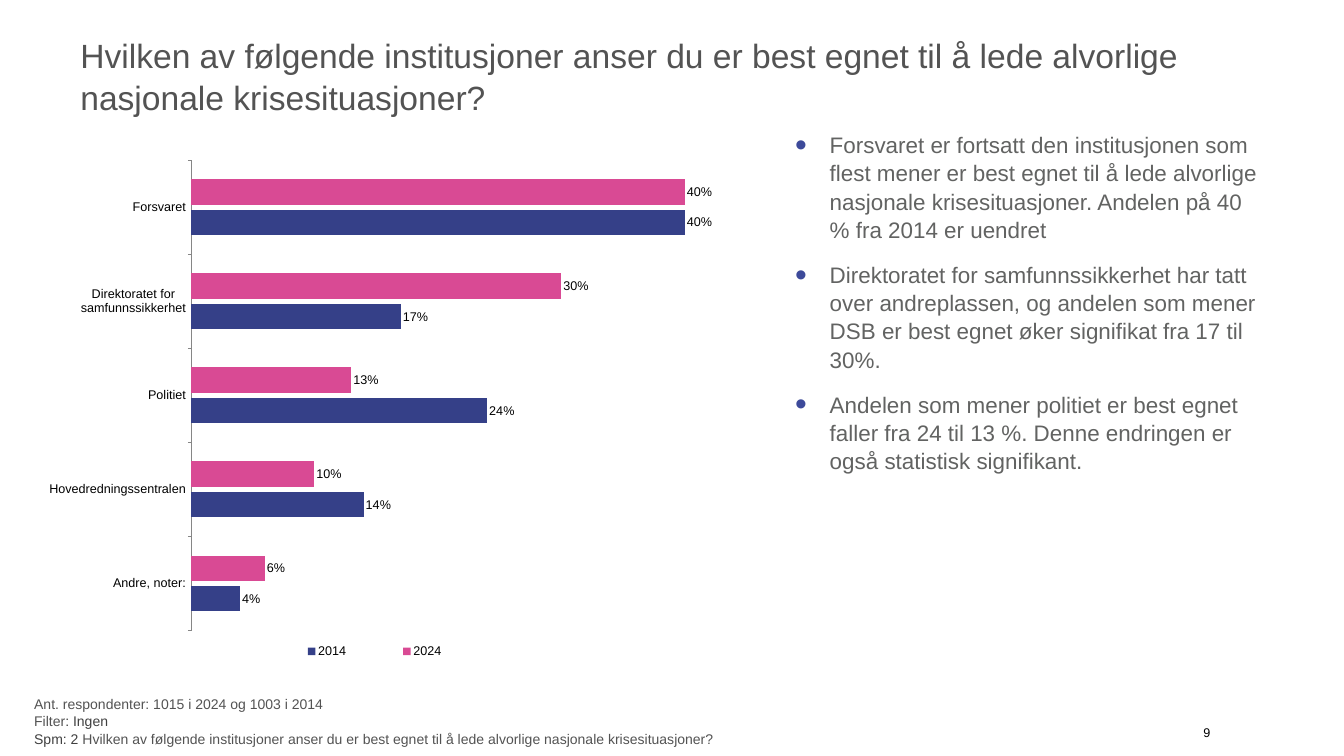
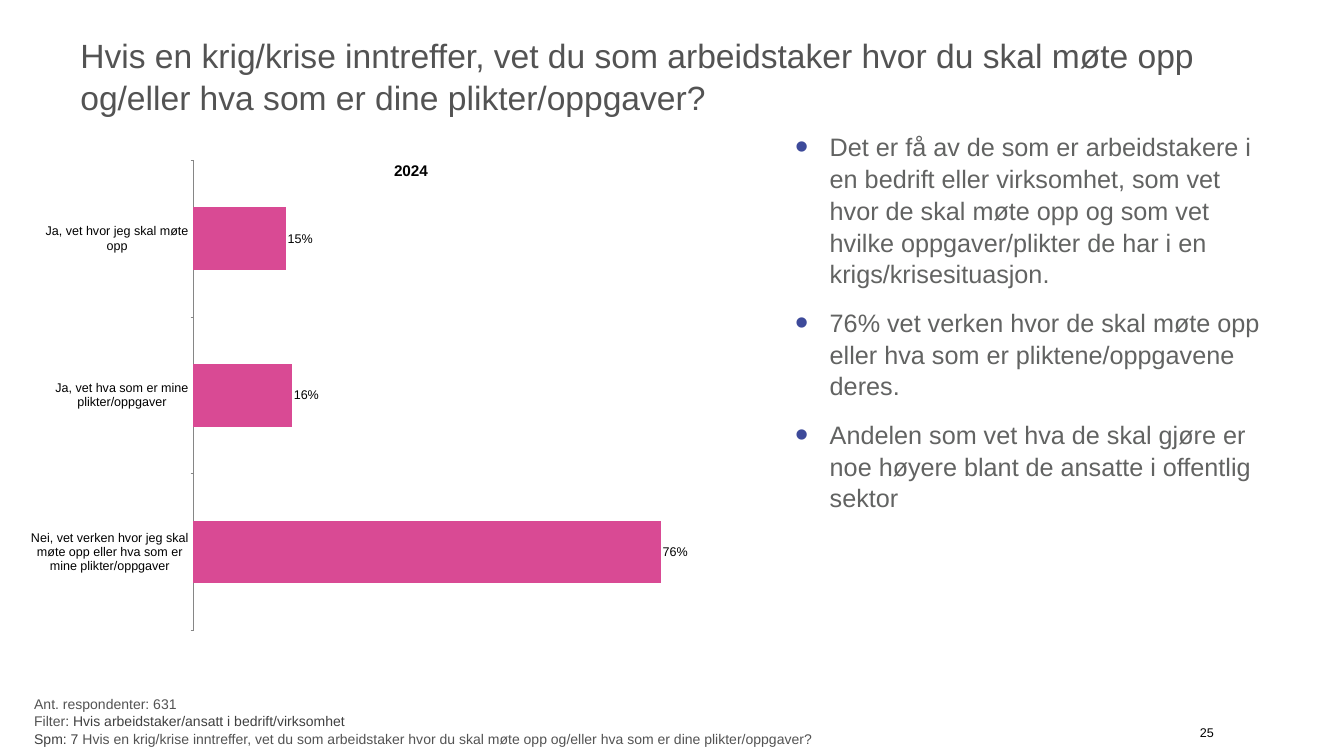
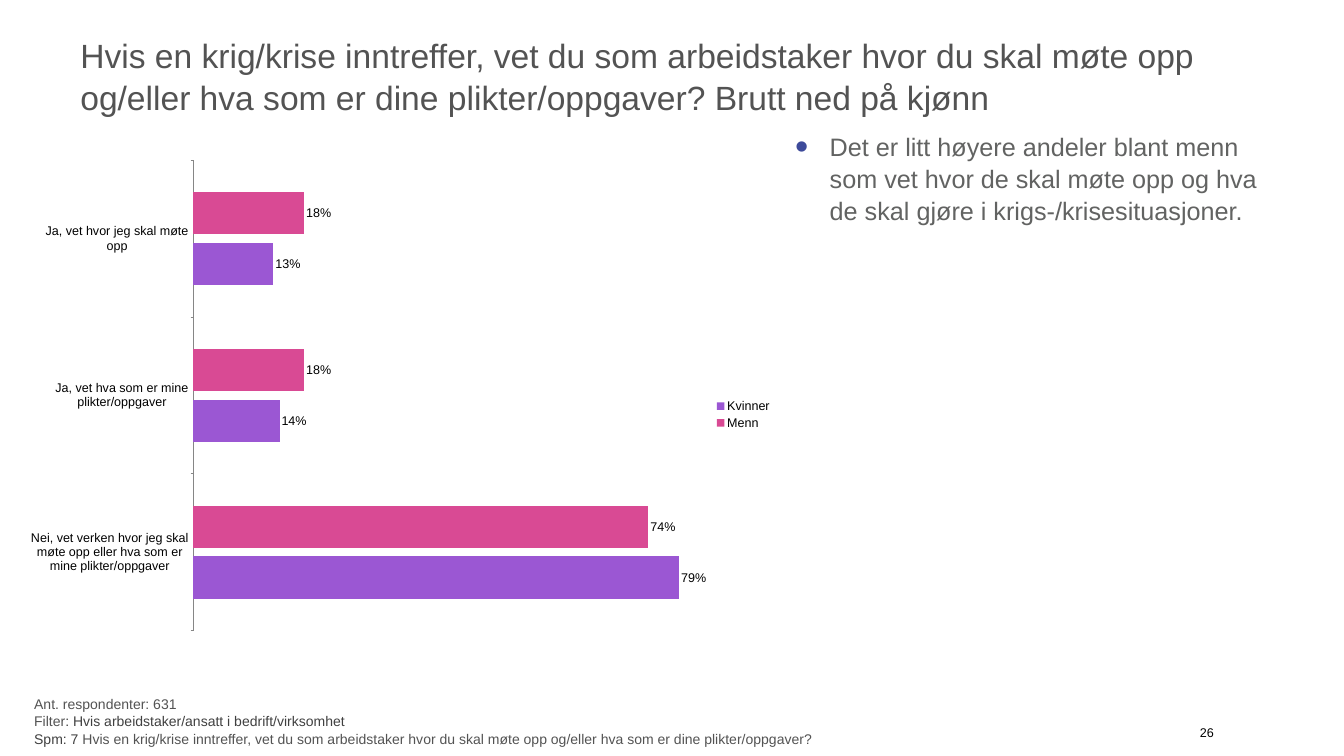
from dataclasses import dataclass

from pptx import Presentation
from pptx.chart.data import CategoryChartData
from pptx.dml.color import RGBColor
from pptx.enum.chart import (XL_CHART_TYPE, XL_LABEL_POSITION, XL_LEGEND_POSITION,
                             XL_TICK_LABEL_POSITION, XL_TICK_MARK)
from pptx.enum.text import MSO_ANCHOR, MSO_AUTO_SIZE, PP_ALIGN
from pptx.oxml import parse_xml
from pptx.oxml.ns import nsdecls, qn
from pptx.util import Pt

PX = 9525


@dataclass(frozen=True)
class Theme:
    font: str = "Arial"
    title: str = "535353"
    body: str = "626362"
    note: str = "404040"
    bullet: str = "3D4A9A"
    black: str = "000000"
    axis: str = "868686"
    pink: str = "D94A94"
    blue: str = "354088"
    purple: str = "9B57D3"
    title_size: int = 48
    note_size: int = 20
    small_size: int = 18
    chart_title_size: int = 22
    line_spacing: float = 1.05


T = Theme()

TITLE_BOX = (147, 45, 2271, 196)
NUMBER_BOX = (2279, 1375, 40, 40)
NOTE_BOX = (59, 1331, 2271, 84)
BODY_BOX = (1505, 243, 918, 1036)
CHART_BOX = (59, 271, 1423, 1037)
PLOT = (305, 34, 1059, 896)
LEGEND_BELOW = (427, 954, 455, 31)
CHART_TITLE_AT = (683, 31)
INDENT = 66

DUTY_QUESTION = ("Hvis en krig/krise inntreffer, vet du som arbeidstaker hvor du skal møte opp "
                 "og/eller hva som er dine plikter/oppgaver?")
LEAD_QUESTION = ("Hvilken av følgende institusjoner anser du er best egnet til å lede alvorlige "
                 "nasjonale krisesituasjoner?")
DUTY_ANSWERS = ["Ja, vet hvor jeg skal møte opp",
                "Ja, vet hva som er mine plikter/oppgaver",
                "Nei, vet verken hvor jeg skal møte opp eller hva som er mine plikter/oppgaver"]
DUTY_NOTE = ("Ant. respondenter: 631", ": Hvis arbeidstaker/ansatt i bedrift/virksomhet",
             "Spm: 7 ", DUTY_QUESTION)

SLIDES = [
    dict(title=LEAD_QUESTION, number="9", body_size=32, scale_max=0.45,
         note=("Ant. respondenter: 1015 i 2024 og 1003 i 2014", ": Ingen", "Spm: 2 ", LEAD_QUESTION),
         points=["Forsvaret er fortsatt den institusjonen som flest mener er best egnet til å lede "
                 "alvorlige nasjonale krisesituasjoner. Andelen på 40 % fra 2014 er uendret",
                 "Direktoratet for samfunnssikkerhet har tatt over andreplassen, og andelen som "
                 "mener DSB er best egnet øker signifikat fra 17 til 30%.",
                 "Andelen som mener politiet er best egnet faller fra 24 til 13 %. Denne endringen "
                 "er også statistisk signifikant."],
         answers=["Forsvaret", "Direktoratet for samfunnssikkerhet", "Politiet",
                  "Hovedredningssentralen", "Andre, noter:"],
         series=[("2024", (0.4, 0.3, 0.13, 0.1, 0.06), T.pink),
                 ("2014", (0.4, 0.17, 0.24, 0.14, 0.04), T.blue)],
         legend_box=LEGEND_BELOW),
    dict(title=DUTY_QUESTION, number="25", body_size=36, scale_max=0.9, note=DUTY_NOTE,
         points=["Det er få av de som er arbeidstakere i en bedrift eller virksomhet, som vet hvor "
                 "de skal møte opp og som vet hvilke oppgaver/plikter de har i en krigs/krisesituasjon.",
                 "76% vet verken hvor de skal møte opp eller hva som er pliktene/oppgavene deres.",
                 "Andelen som vet hva de skal gjøre er noe høyere blant de ansatte i offentlig sektor"],
         answers=DUTY_ANSWERS,
         series=[("2024", (0.15, 0.16, 0.76), T.pink)],
         legend_box=None),
    dict(title=DUTY_QUESTION + " Brutt ned på kjønn", number="26", body_size=36, scale_max=0.9,
         note=DUTY_NOTE,
         points=["Det er litt høyere andeler blant menn som vet hvor de skal møte opp og hva de "
                 "skal gjøre i krigs-/krisesituasjoner."],
         answers=DUTY_ANSWERS,
         series=[("Menn", (0.18, 0.18, 0.74), T.pink),
                 ("Kvinner", (0.13, 0.14, 0.79), T.purple)],
         legend_box=None),
]


def add_text(s, box, paragraphs, size, inset=None, anchor=MSO_ANCHOR.TOP):
    sp = s.shapes.add_textbox(*(v * PX for v in box))
    tf = sp.text_frame
    tf.word_wrap = True
    tf.vertical_anchor = anchor
    if inset is not None:
        tf.margin_left = tf.margin_right = tf.margin_top = tf.margin_bottom = inset * PX
    for i, runs in enumerate(paragraphs):
        p = tf.add_paragraph() if i else tf.paragraphs[0]
        p.line_spacing = T.line_spacing
        for text, color in runs:
            r = p.add_run()
            r.text = text
            r.font.name = T.font
            r.font.size = Pt(size)
            r.font.color.rgb = RGBColor.from_string(color)
    return tf


def place(element, index, box, inner=False):
    for old in element.findall(qn("c:layout")):
        element.remove(old)
    target = '<c:layoutTarget val="inner"/>' if inner else ""
    modes = '<c:xMode val="edge"/><c:yMode val="edge"/>'
    whole = CHART_BOX[2:] * 2
    sizes = "".join(f'<c:{tag} val="{v / total:.3f}"/>'
                    for tag, v, total in zip("xywh", box, whole))
    element.insert(index, parse_xml(
        f'<c:layout {nsdecls("c")}><c:manualLayout>{target}{modes}{sizes}'
        '</c:manualLayout></c:layout>'))


prs = Presentation()
prs.slide_width = 2560 * PX
prs.slide_height = 1440 * PX

for page in SLIDES:
    s = prs.slides.add_slide(prs.slide_layouts[6])
    add_text(s, TITLE_BOX, [[(page["title"], T.title)]], T.title_size, 6, MSO_ANCHOR.MIDDLE)

    tf = add_text(s, NUMBER_BOX, [[(page["number"], T.black)]], T.small_size, 6)
    tf.word_wrap = False
    tf.auto_size = MSO_AUTO_SIZE.SHAPE_TO_FIT_TEXT
    tf.paragraphs[0].alignment = PP_ALIGN.CENTER
    tf.paragraphs[0].line_spacing = 1.0

    count, group, label, question = page["note"]
    add_text(s, NOTE_BOX,
             [[(count, T.title)],
              [("Filter", T.title), (group, T.note)],
              [(label, T.note), (question, T.title)]],
             T.note_size, 6, MSO_ANCHOR.MIDDLE)

    tf = add_text(s, BODY_BOX, [[(point, T.body)] for point in page["points"]], page["body_size"])
    for i, p in enumerate(tf.paragraphs):
        pPr = p._p.get_or_add_pPr()
        pPr.set("marL", str(INDENT * PX))
        pPr.set("indent", str(-INDENT * PX))
        for xml in (f'<a:buClr {nsdecls("a")}><a:srgbClr val="{T.bullet}"/></a:buClr>',
                    f'<a:buSzPct {nsdecls("a")} val="150000"/>',
                    f'<a:buFont {nsdecls("a")} typeface="{T.font}"/>',
                    f'<a:buChar {nsdecls("a")} char="•"/>'):
            pPr.append(parse_xml(xml))
        if i:
            p.space_before = Pt(18)
        p.space_after = Pt(6)

    data = CategoryChartData(number_format="0%")
    data.categories = page["answers"]
    for name, values, color in page["series"]:
        data.add_series(name, values)
    chart = s.shapes.add_chart(XL_CHART_TYPE.BAR_CLUSTERED,
                               *(v * PX for v in CHART_BOX), data).chart
    chart.font.name = T.font
    chart.font.size = Pt(T.small_size)
    chart.font.color.rgb = RGBColor.from_string(T.black)
    place(chart._chartSpace.chart.plotArea, 0, PLOT, inner=True)

    axis = chart.category_axis
    axis.reverse_order = True
    axis.major_tick_mark = XL_TICK_MARK.OUTSIDE
    axis.minor_tick_mark = XL_TICK_MARK.NONE
    axis.tick_label_position = XL_TICK_LABEL_POSITION.NEXT_TO_AXIS
    axis.format.line.color.rgb = RGBColor.from_string(T.axis)
    axis.format.line.width = Pt(0.75)
    scale = chart.value_axis
    scale.visible = False
    scale.has_major_gridlines = False
    scale.minimum_scale = 0
    scale.maximum_scale = page["scale_max"]

    plot = chart.plots[0]
    plot.gap_width = 150
    plot.overlap = -20
    plot.vary_by_categories = False
    plot.has_data_labels = True
    labels = plot.data_labels
    labels.show_value = True
    labels.number_format = "0%"
    labels.number_format_is_linked = False
    labels.position = XL_LABEL_POSITION.OUTSIDE_END
    for bars, (name, values, color) in zip(plot.series, page["series"]):
        bars.invert_if_negative = False
        bars.format.fill.solid()
        bars.format.fill.fore_color.rgb = RGBColor.from_string(color)

    chart.has_title = len(page["series"]) == 1
    chart.has_legend = not chart.has_title
    if chart.has_title:
        tf = chart.chart_title.text_frame
        tf.text = page["series"][0][0]
        r = tf.paragraphs[0].runs[0]
        r.font.name = T.font
        r.font.size = Pt(T.chart_title_size)
        r.font.bold = True
        r.font.color.rgb = RGBColor.from_string(T.black)
        place(chart.chart_title._element, 1, CHART_TITLE_AT)
    else:
        chart.legend.position = XL_LEGEND_POSITION.RIGHT
        chart.legend.include_in_layout = False
        if page["legend_box"]:
            place(chart.legend._element, 1, page["legend_box"])

prs.save("out.pptx")
